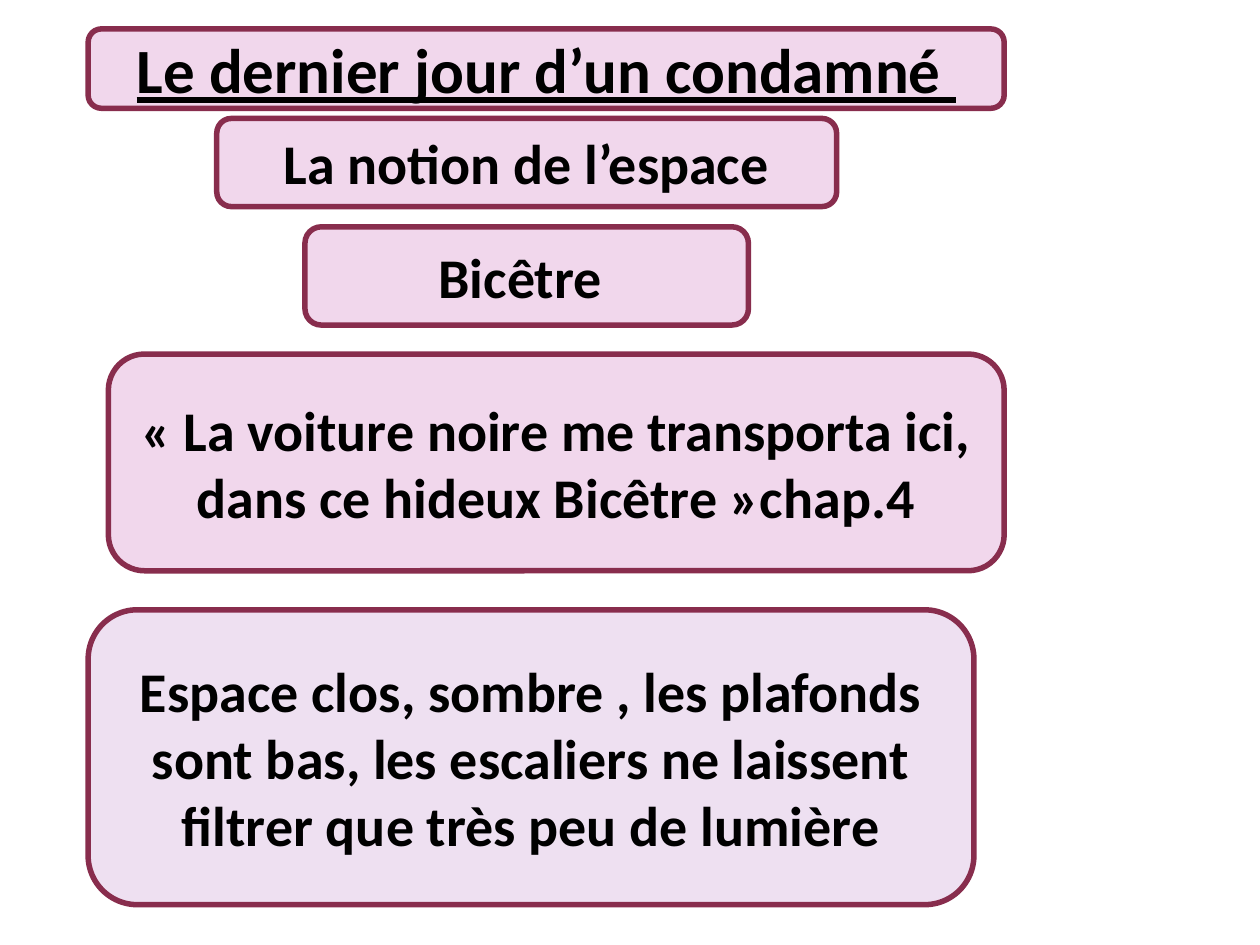
from dataclasses import dataclass

import pptx
import pptx.dml.color
import pptx.enum.shapes
import pptx.enum.text
import pptx.util

SLIDE_WIDTH = pptx.util.Inches(10)
SLIDE_HEIGHT = pptx.util.Inches(7.5)
# Grid of 1000 columns by 750 rows: one unit is a hundredth of an inch.
COLUMN = SLIDE_WIDTH // 1000
ROW = SLIDE_HEIGHT // 750

COLOURS = {"pink": "F1D7EC", "lilac": "EEE0F1", "border": "882D4D", "text": "000000"}


@dataclass(frozen=True)
class Card:
    text: str
    column: int
    row: int
    columns: int
    rows: int
    fill: str = "pink"
    size: int = 32
    underline: bool = False


CARDS = [
    Card("Le dernier jour d’un condamné ", 70, 23, 727, 63, size=36, underline=True),
    Card("La notion de l’espace", 172, 94, 492, 70),
    Card("Bicêtre ", 242, 180, 352, 78),
    Card("« La voiture noire me transporta ici, dans ce hideux Bicêtre »chap.4",
         86, 281, 711, 172),
    Card("Espace clos, sombre , les plafonds sont bas, les escaliers ne laissent "
         "filtrer que très peu de lumière", 70, 484, 703, 234, fill="lilac"),
]


def colour(name: str) -> pptx.dml.color.RGBColor:
    return pptx.dml.color.RGBColor.from_string(COLOURS[name])


def draw_card(slide, card: Card) -> None:
    shape = slide.shapes.add_shape(
        pptx.enum.shapes.MSO_SHAPE.ROUNDED_RECTANGLE,
        card.column * COLUMN, card.row * ROW,
        card.columns * COLUMN, card.rows * ROW,
    )
    shape.shadow.inherit = False
    shape.fill.solid()
    shape.fill.fore_color.rgb = colour(card.fill)
    shape.line.color.rgb = colour("border")
    shape.line.width = pptx.util.Pt(3.15)

    frame = shape.text_frame
    frame.word_wrap = True
    frame.vertical_anchor = pptx.enum.text.MSO_ANCHOR.MIDDLE
    paragraph = frame.paragraphs[0]
    paragraph.alignment = pptx.enum.text.PP_ALIGN.CENTER
    run = paragraph.add_run()
    run.text = card.text
    run.font.name = "Calibri"
    run.font.size = pptx.util.Pt(card.size)
    run.font.bold = True
    run.font.underline = card.underline
    run.font.color.rgb = colour("text")


def main() -> None:
    presentation = pptx.Presentation()
    presentation.slide_width = SLIDE_WIDTH
    presentation.slide_height = SLIDE_HEIGHT
    slide = presentation.slides.add_slide(presentation.slide_layouts[6])
    for card in CARDS:
        draw_card(slide, card)
    presentation.save("out.pptx")


if __name__ == "__main__":
    main()
